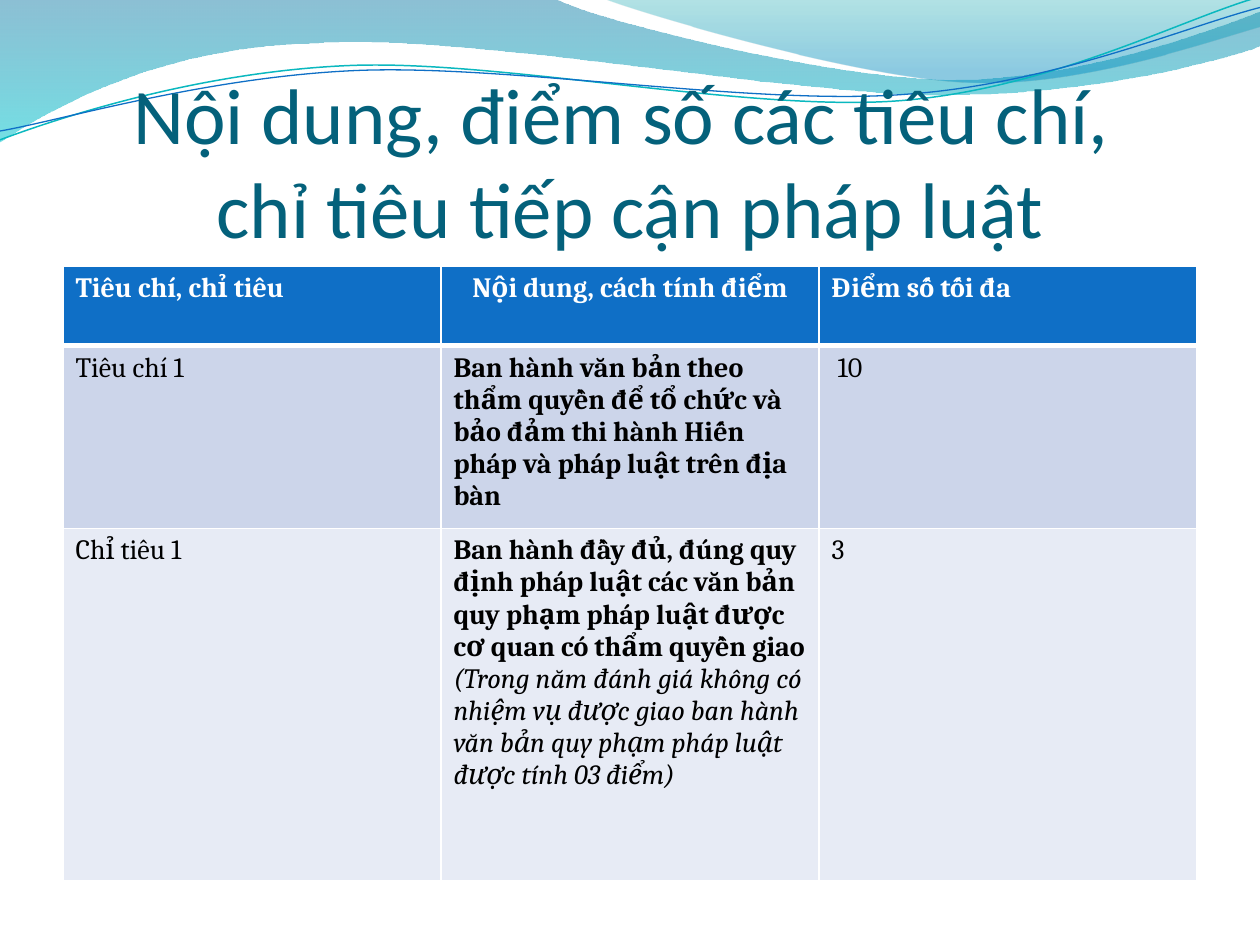
from math import cos, radians, sin

from lxml.etree import SubElement
from pptx import Presentation
from pptx.dml.color import RGBColor
from pptx.enum.text import MSO_ANCHOR, PP_ALIGN
from pptx.oxml.ns import qn
from pptx.util import Cm, Pt

COLORS = {
    "title": "04617B", "header": "0F6FC6", "odd": "CCD5EA", "even": "E7EBF5",
    "white": "FFFFFF", "black": "000000", "teal_line": "0AB8BF", "blue_line": "0F6FC6",
    "deep_blue": "0074A1", "cyan": "00C6CF", "teal": "00A1A9", "blue": "008BBF",
}
INCH = 2.54
TILT = 2.7


def add_wave(shapes, start, segments, close, tilt=0, center=(0, 0)):
    points = [start]
    for segment in segments:
        points.extend(zip(segment[::2], segment[1::2]))
    cosine, sine = cos(radians(tilt)), sin(radians(tilt))
    vertices = []
    for x, y in points:
        dx, dy = x - center[0], y - center[1]
        vertices.append((Cm((center[0] + dx * cosine - dy * sine) * INCH),
                         Cm((center[1] + dx * sine + dy * cosine) * INCH)))
    builder = shapes.build_freeform(*vertices[0], scale=1.0)
    builder.add_line_segments(vertices[1:], close=close)
    wave = builder.convert_to_shape()
    wave.shadow.inherit = False
    wave.rotation = -tilt
    lines = wave._element.iter(qn("a:lnTo"))
    lines = iter(list(lines))
    for segment in segments:
        group = [next(lines) for _ in segment[::2]]
        if len(group) == 3:
            curve = SubElement(group[0].getparent(), qn("a:cubicBezTo"))
            group[0].addprevious(curve)
            for line in group:
                curve.append(line[0])
                line.getparent().remove(line)
    return wave


def add_run(paragraph, text, font_name, size, color, bold=False, italic=False):
    run = paragraph.add_run()
    run.text = text
    run.font.name = font_name
    run.font.size = Pt(size)
    run.font.bold = bold
    run.font.italic = italic
    run.font.color.rgb = RGBColor.from_string(COLORS[color])


presentation = Presentation()
presentation.slide_width = Cm(25.4)
presentation.slide_height = Cm(19.05)
slide = presentation.slides.add_slide(presentation.slide_layouts[6])

filled_waves = [
    ((-0.01, -0.01),
     [(4.4, -0.01), (4.76, 0.17, 6.64, 0.63, 7.58, 0.63), (8.53, 0.63, 9.58, 0.26, 10, 0.09),
      (10.01, 0.36), (9.83, 0.44, 8.7, 0.76, 7.46, 0.75), (6.22, 0.75, 3.82, 0.28, 2.57, 0.34),
      (1.29, 0.36, 0.46, 0.83, -0.01, 1.13), (-0.01, -0.01)],
     [(0, "deep_blue", 45), (1, "cyan", 55)]),
    ((4.79, -0.01),
     [(5.09, 0.11, 6.82, 0.62, 7.69, 0.65), (8.56, 0.69, 9.61, 0.32, 10, 0.21), (10, 0),
      (4.79, -0.01)],
     [(0, "teal", 30), (0.8, "blue", 45)]),
]
for start, segments, stops in filled_waves:
    wave = add_wave(slide.shapes, start, segments, True)
    wave.line.fill.background()
    wave.fill.gradient()
    wave.fill.gradient_angle = 270
    for stop, (position, color, _) in zip(wave.fill.gradient_stops, stops):
        stop.position = position
        stop.color.rgb = RGBColor.from_string(COLORS[color])
    gradient = wave._element.spPr.find(qn("a:gradFill"))
    for element, (_, _, opacity) in zip(gradient.iter(qn("a:srgbClr")), stops):
        SubElement(element, qn("a:alpha")).set("val", str(opacity * 1000))

line_waves = [
    ((0, 1.11),
     [(0.48, 0.93, 1.58, 0.57, 2.77, 0.52), (3.95, 0.47, 5.93, 0.89, 7.13, 0.8),
      (8.33, 0.71, 9.38, 0.15, 9.98, -0.02)], (4.99, 0.58), "teal_line", 0.85),
    ((0, 1.04),
     [(0.47, 0.96, 1.64, 0.61, 2.83, 0.56), (4.03, 0.51, 5.97, 0.84, 7.17, 0.75),
      (8.36, 0.67, 9.41, 0.21, 10, 0.06)], (5, 0.59), "blue_line", 0.75),
]
for start, segments, center, color, width in line_waves:
    wave = add_wave(slide.shapes, start, segments, False, TILT, center)
    wave.fill.background()
    wave.line.color.rgb = RGBColor.from_string(COLORS[color])
    wave.line.width = Pt(width)

title = slide.shapes.add_textbox(Cm(1.27), Cm(1.95), Cm(22.86), Cm(3.18))
frame = title.text_frame
frame.word_wrap = True
frame.vertical_anchor = MSO_ANCHOR.BOTTOM
frame.margin_left = frame.margin_right = frame.margin_bottom = 0
frame.margin_top = Cm(0.13)
paragraph = frame.paragraphs[0]
paragraph.alignment = PP_ALIGN.CENTER
add_run(paragraph, "Nội dung, điểm số các tiêu chí, ", "Calibri", 45, "title")
paragraph.add_line_break()
add_run(paragraph, "chỉ tiêu tiếp cận pháp luật", "Calibri", 45, "title")

rows = [
    (1.6, "header", "white", [
        [("Tiêu chí, chỉ tiêu", True, False)],
        [("Nội dung, cách tính điểm", True, False)],
        [("Điểm số tối đa", True, False)]]),
    (3.68, "odd", "black", [
        [("Tiêu chí 1", False, False)],
        [("Ban hành văn bản theo thẩm quyền để tổ chức và bảo đảm thi hành "
          "Hiến pháp và pháp luật trên địa bàn", True, False)],
        [(" 10", False, False)]]),
    (7.11, "even", "black", [
        [("Chỉ tiêu 1", False, False)],
        [("Ban hành đầy đủ, đúng quy định pháp luật các văn bản quy phạm pháp luật "
          "được cơ quan có thẩm quyền giao ", True, False),
         ("(Trong năm đánh giá không có nhiệm vụ được giao ban hành văn bản quy phạm "
          "pháp luật được tính 03 điểm)", False, True)],
        [("3", False, False)]]),
]
table = slide.shapes.add_table(3, 3, Cm(1.27), Cm(5.37), Cm(22.86), Cm(12.39)).table
for column in table.columns:
    column.width = Cm(7.62)
for row_index, (height, fill, color, cells) in enumerate(rows):
    table.rows[row_index].height = Cm(height)
    for column_index, runs in enumerate(cells):
        cell = table.cell(row_index, column_index)
        properties = cell._tc.get_or_add_tcPr()
        for side in ("lnL", "lnR", "lnT", "lnB"):
            thick = (row_index, side) in ((0, "lnB"), (1, "lnT"))
            border = SubElement(properties, qn(f"a:{side}"), w=str(Pt(3 if thick else 1)))
            border_fill = SubElement(border, qn("a:solidFill"))
            SubElement(border_fill, qn("a:srgbClr"), val=COLORS["white"])
        cell.fill.solid()
        cell.fill.fore_color.rgb = RGBColor.from_string(COLORS[fill])
        paragraph = cell.text_frame.paragraphs[0]
        if (row_index, column_index) == (0, 1):
            paragraph.alignment = PP_ALIGN.CENTER
        for text, bold, italic in runs:
            add_run(paragraph, text, "Cambria", 16, color, bold, italic)

presentation.save("out.pptx")
